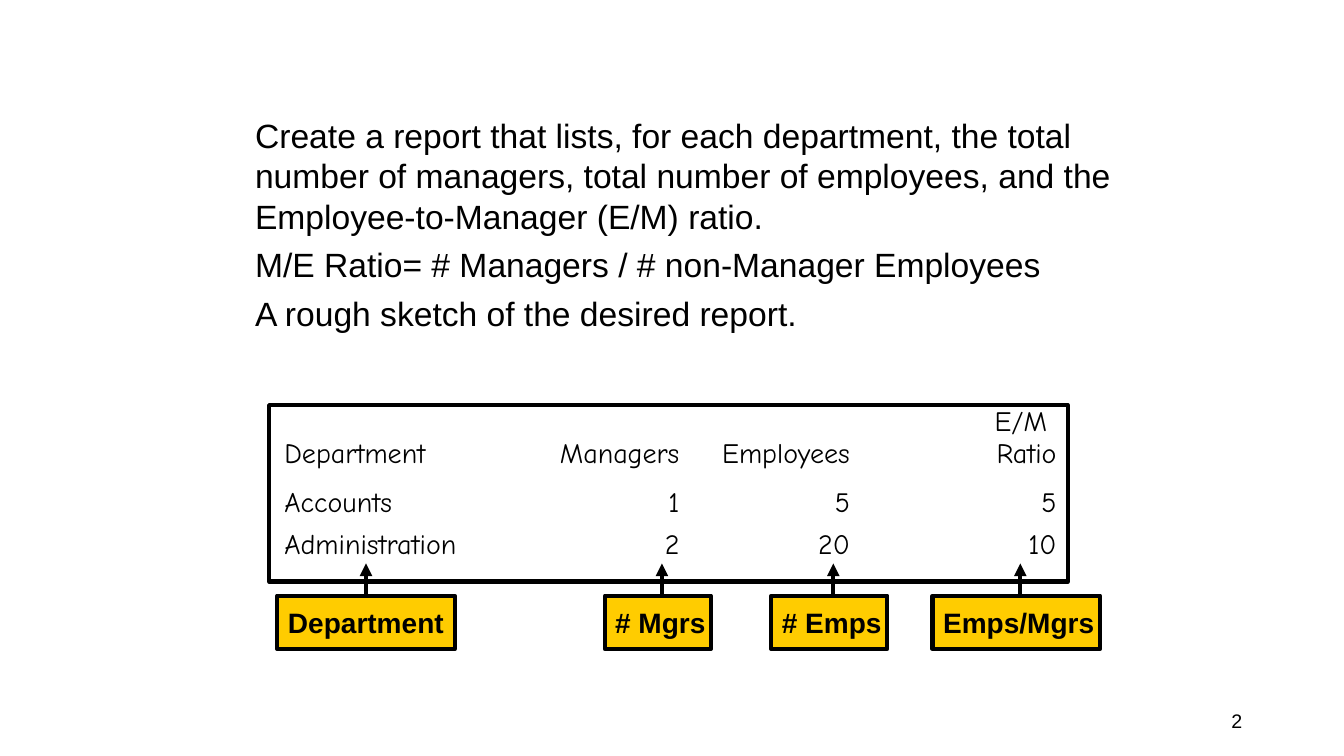
from pptx import Presentation
from pptx.dml.color import RGBColor
from pptx.enum.shapes import MSO_CONNECTOR, MSO_SHAPE
from pptx.enum.text import MSO_ANCHOR as ANCHOR, PP_ALIGN as ALIGN
from pptx.oxml.ns import qn
from pptx.util import Inches, Pt
from lxml.etree import SubElement
from dataclasses import dataclass


@dataclass(frozen=True)
class Theme:
    ink: RGBColor = RGBColor(0, 0, 0)
    paper: RGBColor = RGBColor(255, 255, 255)
    accent: RGBColor = RGBColor(255, 204, 0)
    sans: str = "Arial"
    hand: str = "Comic Neue"
    brief_size: int = 24
    report_size: int = 20
    number_size: int = 14
    stroke: int = 3


THEME = Theme()

BRIEF = [
    "Create a report that lists, for each department, the total number of managers, "
    "total number of employees, and the Employee-to-Manager (E/M) ratio.",
    "M/E Ratio= # Managers / # non-Manager Employees",
    "A rough sketch of the desired report.",
]
REPORT = [
    ("Department", "Managers", "Employees", "E/M \vRatio"),
    ("Accounts", "1", "5", "5"),
    ("Administration", "2", "20", "10"),
]
COLUMN_WIDTHS = (2.33, 1.59, 1.69, 2.05)
ROW_HEIGHTS = (0.8, 0.42, 0.57)
HEADER_GAP = 0.16
SOURCES = [
    {"label": "Department", "left": 2.75, "width": 1.76, "pad": 0.1, "shift": 0},
    {"label": "# Mgrs", "left": 6, "width": 1.05, "pad": 0.05, "shift": 0.04},
    {"label": "# Emps", "left": 7.65, "width": 1.15, "pad": 0.05, "shift": 0.04},
    {"label": "Emps/Mgrs", "left": 9.25, "width": 1.66, "pad": 0.05, "shift": 0.04},
]
SOURCE_TOP, SOURCE_HEIGHT, ARROW_TIP = 5.91, 0.53, 5.59
SLIDE_NUMBER = "2"


def apply(target, formats):
    for attribute, value in formats.items():
        setattr(target, attribute, value)


def margins(left=0, top=0, right=0, bottom=0):
    return {"margin_left": Inches(left), "margin_top": Inches(top),
            "margin_right": Inches(right), "margin_bottom": Inches(bottom)}


def write(paragraph, text, size, face=THEME.sans, bold=False, **formats):
    paragraph.text = text
    apply(paragraph, formats)
    for run in paragraph.runs:
        apply(run.font, {"size": Pt(size), "name": face, "bold": bold})
        run.font.color.rgb = THEME.ink


def add_box(slide, bounds, fill):
    box = slide.shapes.add_shape(MSO_SHAPE.RECTANGLE, *map(Inches, bounds))
    box.shadow.inherit = False
    box.fill.solid()
    box.fill.fore_color.rgb = fill
    box.line.color.rgb = THEME.ink
    box.line.width = Pt(THEME.stroke)
    return box


def add_report(slide):
    add_box(slide, (2.67, 4.02, 7.92, 1.75), THEME.paper)
    frame = slide.shapes.add_table(
        len(REPORT), len(COLUMN_WIDTHS), Inches(2.82), Inches(4.03),
        Inches(sum(COLUMN_WIDTHS)), Inches(sum(ROW_HEIGHTS)))
    report = frame.table
    apply(report, {"first_row": False, "horz_banding": False})
    for column, width in zip(report.columns, COLUMN_WIDTHS):
        column.width = Inches(width)
    for r, (entries, height) in enumerate(zip(REPORT, ROW_HEIGHTS)):
        report.rows[r].height = Inches(height)
        for c, entry in enumerate(entries):
            cell = report.cell(r, c)
            cell.fill.background()
            apply(cell, margins(bottom=0 if r else HEADER_GAP))
            cell.vertical_anchor = ANCHOR.TOP if r else ANCHOR.BOTTOM
            write(cell.text_frame.paragraphs[0], entry, THEME.report_size,
                  THEME.hand, alignment=ALIGN.RIGHT if c else ALIGN.LEFT)
    style = report._tbl.tblPr.find(qn("a:tableStyleId"))
    style.text = "{2D5ABB26-0587-4C30-8999-92F81FD0307C}"


def add_source(slide, label, left, width, pad, shift):
    box = add_box(slide, (left, SOURCE_TOP, width, SOURCE_HEIGHT), THEME.accent)
    apply(box.text_frame, margins(0.1, 0.1, pad, 0.1)
          | {"word_wrap": False, "vertical_anchor": ANCHOR.TOP})
    write(box.text_frame.paragraphs[0], label, THEME.report_size, bold=True,
          alignment=ALIGN.CENTER)
    x = Inches(left + width / 2 + shift)
    arrow = slide.shapes.add_connector(
        MSO_CONNECTOR.STRAIGHT, x, Inches(SOURCE_TOP), x, Inches(ARROW_TIP))
    if not shift:
        arrow.begin_connect(box, 0)
    arrow.line.color.rgb = THEME.ink
    arrow.line.width = Pt(THEME.stroke)
    SubElement(arrow.line._get_or_add_ln(), qn("a:tailEnd"), type="triangle")
    SubElement(arrow._element.spPr, qn("a:effectLst"))


def add_brief(slide):
    brief = slide.shapes.add_textbox(*map(Inches, (2.53, 1.14, 8.58, 2.92))).text_frame
    apply(brief, margins() | {"word_wrap": True})
    for i, sentence in enumerate(BRIEF):
        paragraph = brief.add_paragraph() if i else brief.paragraphs[0]
        write(paragraph, sentence, THEME.brief_size, space_before=Pt(6))


def add_number(slide):
    number = slide.shapes.add_textbox(*map(Inches, (9.42, 6.95, 3, 0.4))).text_frame
    apply(number, {"word_wrap": True, "vertical_anchor": ANCHOR.MIDDLE})
    write(number.paragraphs[0], SLIDE_NUMBER, THEME.number_size, alignment=ALIGN.RIGHT)


def main():
    deck = Presentation()
    apply(deck, {"slide_width": Inches(13.33), "slide_height": Inches(7.5)})
    slide = deck.slides.add_slide(deck.slide_layouts[6])
    add_report(slide)
    for source in SOURCES:
        add_source(slide, **source)
    add_brief(slide)
    add_number(slide)
    deck.save("out.pptx")


if __name__ == "__main__":
    main()
